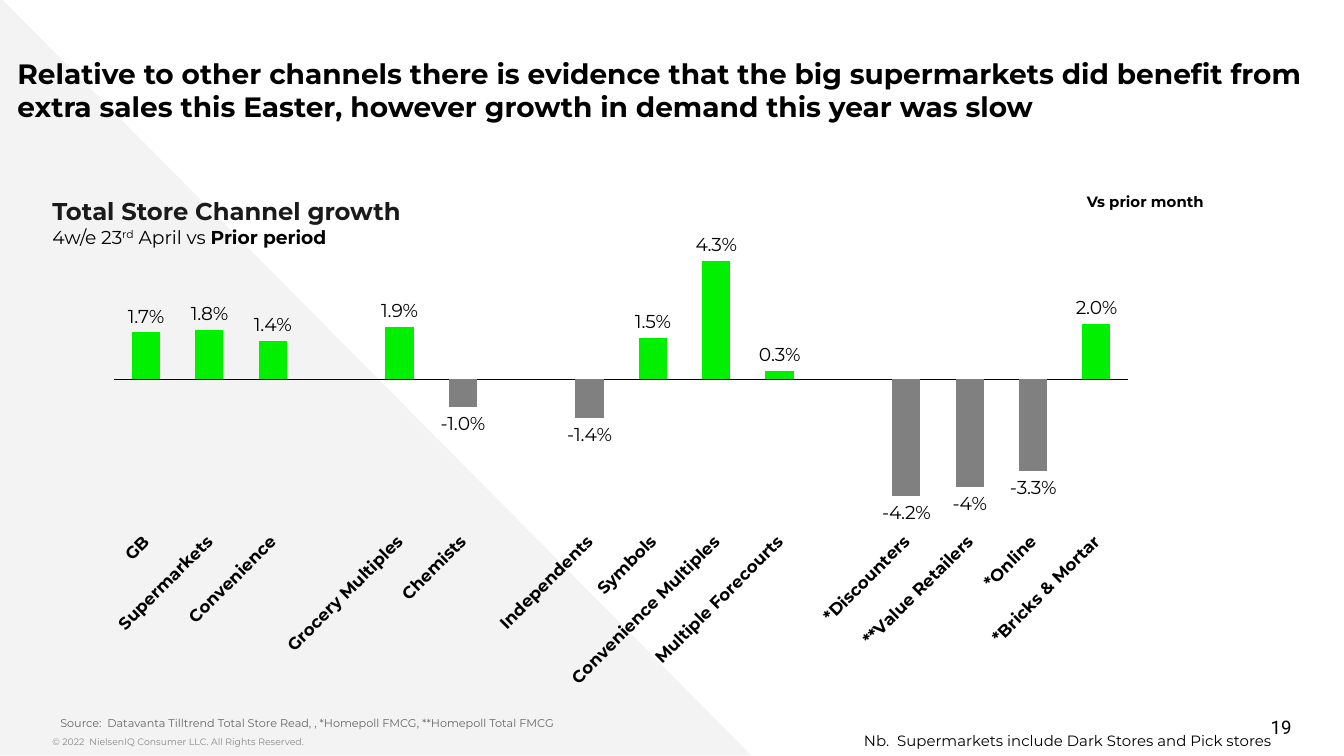
from dataclasses import dataclass

from lxml.etree import SubElement
from pptx import Presentation
from pptx.chart.data import CategoryChartData
from pptx.dml.color import RGBColor
from pptx.enum.chart import (XL_CHART_TYPE, XL_LABEL_POSITION,
                             XL_TICK_LABEL_POSITION, XL_TICK_MARK)
from pptx.enum.shapes import MSO_SHAPE
from pptx.enum.text import MSO_ANCHOR, MSO_AUTO_SIZE, PP_ALIGN
from pptx.oxml.ns import qn
from pptx.util import Cm, Pt


@dataclass(frozen=True)
class Theme:
    # Fonts
    main: str = "Montserrat"
    alt: str = "Roboto"
    # Colours
    black: str = "000000"
    ink: str = "1A1A1A"
    grey: str = "666666"
    pale: str = "888888"
    back: str = "F3F3F3"
    up: str = "00F000"
    down: str = "808080"
    # Type sizes
    title: float = 15
    head: float = 13
    text: float = 10
    axis: float = 9
    note: float = 8
    source: float = 6
    legal: float = 5


def style(font, form):
    """Set font attributes from a dict; colour is given as hex."""
    for key, value in form.items():
        if key == "color":
            font.color.rgb = RGBColor.from_string(value)
        else:
            setattr(font, key, Pt(value) if key == "size" else value)


class Deck:
    def __init__(self, theme):
        self.theme = theme
        self.file = Presentation()
        self.file.slide_width, self.file.slide_height = Cm(25.4), Cm(14.29)
        self.slide = self.file.slides.add_slide(self.file.slide_layouts[0])

    def form(self, size, color=None, bold=False, name=None):
        return {"name": name or self.theme.main, "size": size, "bold": bold,
                "color": color or self.theme.black}

    def place(self, shape, box):
        for key, value in zip(("left", "top", "width", "height"), box):
            setattr(shape, key, Cm(value))

    def wedge(self, box):
        shape = self.slide.shapes.add_shape(
            MSO_SHAPE.RIGHT_TRIANGLE, *map(Cm, box))
        shape.shadow.inherit = False
        shape.fill.solid()
        shape.fill.fore_color.rgb = RGBColor.from_string(self.theme.back)
        shape.line.fill.background()
        # Send behind the placeholders
        self.slide.shapes._spTree.insert(2, shape._element)

    def fill(self, shape, lines, pad, align=PP_ALIGN.LEFT,
             anchor=MSO_ANCHOR.TOP, wrap=True):
        """Write lines of (text, form, raise) runs, parted by line breaks."""
        side, rim = pad
        frame = shape.text_frame
        auto = MSO_AUTO_SIZE.NONE if wrap else MSO_AUTO_SIZE.SHAPE_TO_FIT_TEXT
        looks = {"word_wrap": wrap, "auto_size": auto,
                 "vertical_anchor": anchor,
                 "margin_left": Cm(side), "margin_right": Cm(side),
                 "margin_top": Cm(rim), "margin_bottom": Cm(rim)}
        for key, value in looks.items():
            setattr(frame, key, value)
        para = frame.paragraphs[0]
        para.alignment, para.space_before = align, Pt(0)
        for row, line in enumerate(lines):
            if row:
                para.add_line_break()
            for text, form, lift in line:
                run = para.add_run()
                run.text = text
                style(run.font, form)
                if lift:
                    run._r.get_or_add_rPr().set("baseline", str(lift * 1000))
        return para

    def holder(self, index, box, text, form):
        shape = self.slide.placeholders[index]
        self.place(shape, box)
        return self.fill(shape, [[(text, form, 0)]], (0, 0.25))

    def label(self, box, lines, pad=(0, 0.13), **extra):
        shape = self.slide.shapes.add_textbox(*map(Cm, box))
        return self.fill(shape, lines, pad, **extra)

    def chart(self, box, pairs, area, short):
        """Draw columns; labels of the short categories show no decimals."""
        theme = self.theme
        data = CategoryChartData(number_format="0.0%")
        data.categories = [name for name, _ in pairs]
        data.add_series("Series 1", [value for _, value in pairs])
        chart = self.slide.shapes.add_chart(
            XL_CHART_TYPE.COLUMN_CLUSTERED, *map(Cm, box), data).chart
        chart.has_legend = chart.has_title = False
        style(chart.font, self.form(theme.text))

        # Axes
        axis = chart.category_axis
        axis.major_tick_mark = axis.minor_tick_mark = XL_TICK_MARK.NONE
        axis.tick_label_position = XL_TICK_LABEL_POSITION.LOW
        axis.format.line.color.rgb = RGBColor.from_string(theme.black)
        axis.format.line.width = Pt(0.75)
        style(axis.tick_labels.font, self.form(theme.axis, bold=True))
        turn = axis._element.find(qn("c:txPr")).find(qn("a:bodyPr"))
        turn.set("rot", str(-45 * 60000))
        turn.set("vert", "horz")
        scale = chart.value_axis
        scale.minimum_scale, scale.maximum_scale = -0.05, 0.05
        scale.has_major_gridlines = scale.visible = False

        # Columns and their labels
        plot = chart.plots[0]
        plot.gap_width, plot.vary_by_categories = 125, False
        series = plot.series[0]
        series.invert_if_negative = False
        series.format.fill.solid()
        series.format.fill.fore_color.rgb = RGBColor.from_string(theme.up)
        marks = series.data_labels
        marks.show_value = True
        marks.position = XL_LABEL_POSITION.OUTSIDE_END
        marks.number_format, marks.number_format_is_linked = "0.0%", False
        style(marks.font, self.form(theme.text))
        for spot, (name, value) in enumerate(pairs):
            point = series.points[spot]
            if value and value < 0:
                fill = point.format.fill
                fill.solid()
                fill.fore_color.rgb = RGBColor.from_string(theme.down)
            if name in short:
                style(point.data_label.font, self.form(theme.text))
                point.data_label.position = XL_LABEL_POSITION.OUTSIDE_END
                mark = marks._element.find(qn("c:dLbl"))
                code = SubElement(mark, qn("c:numFmt"),
                                  formatCode="0%", sourceLinked="0")
                mark.insert(1, code)

        # Fixed inner plot area
        zone = chart._chartSpace.chart.plotArea
        for old in zone.findall(qn("c:layout")):
            zone.remove(old)
        layout = SubElement(zone, qn("c:layout"))
        zone.insert(0, layout)
        manual = SubElement(layout, qn("c:manualLayout"))
        rules = {"layoutTarget": "inner", "xMode": "edge", "yMode": "edge",
                 **dict(zip("xywh", area))}
        for key, value in rules.items():
            SubElement(manual, qn("c:" + key), val=str(value))


def main():
    theme = Theme()
    deck = Deck(theme)

    # Backdrop
    deck.wedge((0, -0.05, 14.2, 14.33))

    # Title and source
    deck.holder(0, (0.33, 0.81, 25.07, 1.65),
                "Relative to other channels there is evidence that the big "
                "supermarkets did benefit from extra sales this Easter, "
                "however growth in demand this year was slow",
                deck.form(theme.title, bold=True))
    source = deck.holder(1, (0.74, 13.28, 22.66, 0.51),
                         "Source:  Datavanta Tilltrend Total Store Read, , "
                         "*Homepoll FMCG, **Homepoll Total FMCG",
                         deck.form(theme.source, theme.grey))
    source._p.get_or_add_pPr().set("marL", str(Cm(0.4)))

    # Footer
    deck.label((0.99, 13.79, 14.07, 0.51),
               [[("© 2022  NielsenIQ Consumer LLC. All Rights Reserved.",
                  deck.form(theme.legal, theme.pale), 0)]])
    deck.label((18.69, 13.36, 5.72, 0.76),
               [[("19", deck.form(theme.text, name=theme.alt), 0)]],
               align=PP_ALIGN.RIGHT, anchor=MSO_ANCHOR.MIDDLE)

    # Chart heading
    plain = deck.form(theme.text)
    deck.label((0.99, 3.58, 10.57, 1.24), [
        [("Total Store Channel growth",
          deck.form(theme.head, theme.ink, True), 0)],
        [("4w/e 23", plain, 0), ("rd", plain, 30), (" April vs ", plain, 0),
         ("Prior period", deck.form(theme.text, bold=True), 0)]])

    # Channel growth
    growth = [
        ("GB", 0.017), ("Supermarkets", 0.018), ("Convenience", 0.014),
        (" ", None), ("Grocery Multiples", 0.019), ("Chemists", -0.01),
        ("", None), ("Independents", -0.014), ("Symbols", 0.015),
        ("Convenience Multiples", 0.043), ("Multiple Forecourts", 0.003),
        ("", None), ("*Discounters", -0.042), ("**Value Retailers", -0.039),
        ("*Online", -0.033), ("*Bricks & Mortar", 0.02)]
    deck.chart((2.08, 4.14, 19.94, 8.94), growth,
               (0.004, 0.047, 0.961, 0.585), {"**Value Retailers"})

    # Notes
    deck.label((15.98, 13.69, 8.31, 0.61),
               [[("Nb.  Supermarkets include Dark Stores and Pick stores",
                  deck.form(theme.note), 0)]],
               (0.25, 0.13), align=PP_ALIGN.RIGHT, wrap=False)
    deck.label((20.29, 3.51, 2.77, 0.61),
               [[("Vs prior month", deck.form(theme.note, bold=True), 0)]],
               (0.25, 0.13), wrap=False)

    deck.file.save("out.pptx")


if __name__ == "__main__":
    main()
